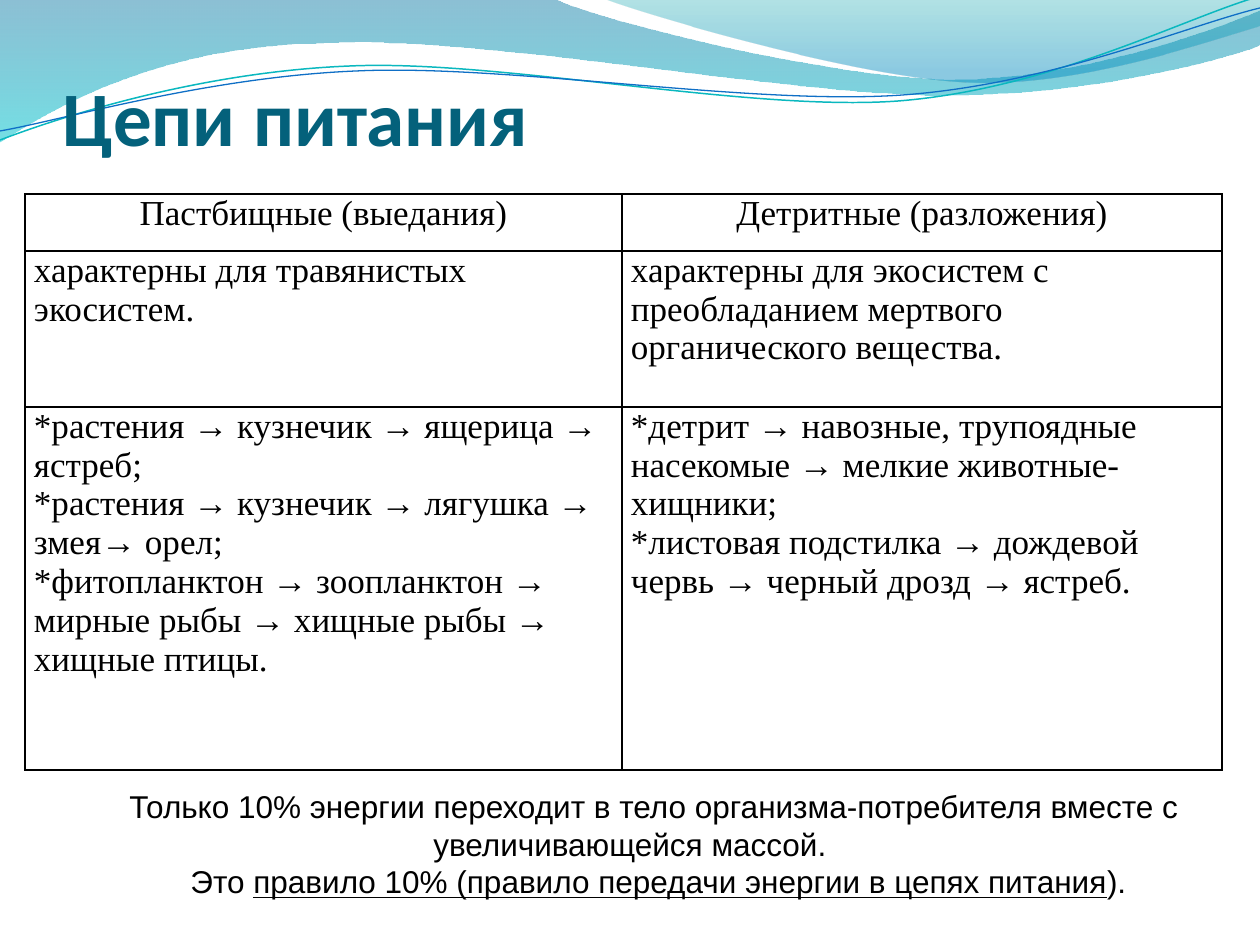
from lxml import etree
from pptx import Presentation
from pptx.dml.color import RGBColor
from pptx.enum.text import MSO_ANCHOR, PP_ALIGN
from pptx.oxml.ns import qn
from pptx.util import Pt

PX = 914400 / 126
LEFT, CENTER = PP_ALIGN.LEFT, PP_ALIGN.CENTER
BOTTOM, MIDDLE = MSO_ANCHOR.BOTTOM, MSO_ANCHOR.MIDDLE
BLACK = RGBColor(0x00, 0x00, 0x00)
TITLE_BLUE = RGBColor(0x04, 0x61, 0x7B)
DEEP_BLUE = RGBColor(0x00, 0x74, 0xA1)
AQUA = RGBColor(0x00, 0xC6, 0xCF)
TEAL = RGBColor(0x00, 0xA1, 0xA9)
SKY = RGBColor(0x00, 0x8B, 0xBF)
LINE_TEAL = RGBColor(0x0A, 0xB8, 0xBF)
LINE_BLUE = RGBColor(0x0F, 0x6F, 0xC6)
TITLE_FONT = {"name": "Calibri", "size": Pt(44), "bold": True}
TABLE_FONT = {"name": "Times New Roman", "size": Pt(20)}
NOTE_FONT = {"name": "Arial", "size": Pt(18)}


def px(*lengths):
    return [round(length * PX) for length in lengths]


def write(para, text, font, color, **extra):
    span = para.add_run()
    span.text = text
    for name, value in {**font, **extra}.items():
        setattr(span.font, name, value)
    span.font.color.rgb = color


deck = Presentation()
deck.slide_width, deck.slide_height = px(1260, 945)
page = deck.slides.add_slide(deck.slide_layouts[6])

waves = [
    {"start": (0, 0),
     "steps": [(554, -1), (600, 21, 837, 79, 955, 79), (1075, 79, 1207, 33, 1260, 11),
               (1261, 45), (1239, 55, 1096, 96, 940, 95), (784, 95, 481, 35, 324, 43),
               (163, 45, 58, 105, -1, 142), (0, 0)],
     "stops": [(0, DEEP_BLUE, 45), (1, AQUA, 55)]},
    {"start": (604, -1),
     "steps": [(641, 14, 859, 78, 969, 82), (1079, 87, 1211, 40, 1260, 26),
               (1260, 0), (604, -1)],
     "stops": [(0, TEAL, 30), (0.8, SKY, 45)]},
    {"start": (0, 140),
     "steps": [(60, 117, 199, 72, 349, 66), (498, 59, 747, 112, 898, 101),
               (1050, 89, 1182, 19, 1257, -3)],
     "line": (LINE_TEAL, 0.85)},
    {"start": (0, 131),
     "steps": [(59, 121, 207, 77, 357, 71), (508, 64, 752, 106, 903, 95),
               (1053, 84, 1186, 26, 1260, 8)],
     "line": (LINE_BLUE, 0.75)},
]
for wave in waves:
    points = [px(*step[i:i + 2]) for step in wave["steps"] for i in range(0, len(step), 2)]
    builder = page.shapes.build_freeform(*px(*wave["start"]), scale=1.0)
    builder.add_line_segments(points, close="stops" in wave)
    shape = builder.convert_to_shape()
    shape.shadow.inherit = False
    segments = iter(list(shape.element.spPr.iter(qn("a:lnTo"))))
    for step in wave["steps"]:
        segment = next(segments)
        if len(step) == 6:
            curve = etree.Element(qn("a:cubicBezTo"))
            segment.addprevious(curve)
            for node in (segment, next(segments), next(segments)):
                curve.append(node[0])
                node.getparent().remove(node)
    if "stops" in wave:
        shape.line.fill.background()
        shape.fill.gradient()
        shape.fill.gradient_angle = 270
        for stop, (position, color, opacity) in zip(shape.fill.gradient_stops, wave["stops"]):
            stop.position = position
            stop.color.rgb = color
        colors = list(shape.element.spPr.iter(qn("a:srgbClr")))
        for node, (position, color, opacity) in zip(colors, wave["stops"]):
            etree.SubElement(node, qn("a:alpha"), val=str(opacity * 1000))
    else:
        shape.fill.background()
        color, width = wave["line"]
        shape.line.color.rgb = color
        shape.line.width = Pt(width)

title = page.shapes.add_textbox(*px(63, 97, 1134, 158)).text_frame
title_format = {"word_wrap": True, "vertical_anchor": BOTTOM, "margin_left": 0,
                "margin_right": 0, "margin_top": 0, "margin_bottom": px(93)[0]}
for name, value in title_format.items():
    setattr(title, name, value)
write(title.paragraphs[0], "Цепи питания", TITLE_FONT, TITLE_BLUE)

rows = [
    (57, CENTER, [["Пастбищные (выедания)"], ["Детритные (разложения)"]]),
    (156, LEFT, [["характерны для травянистых экосистем."],
                 ["характерны для экосистем с преобладанием мертвого органического вещества."]]),
    (363, LEFT, [["*растения → кузнечик → ящерица → ястреб;",
                  "*растения → кузнечик → лягушка → змея→ орел;",
                  "*фитопланктон → зоопланктон → мирные рыбы → хищные рыбы → хищные птицы."],
                 ["*детрит → навозные, трупоядные насекомые → мелкие животные-хищники;",
                  "*листовая подстилка → дождевой червь → черный дрозд → ястреб."]]),
]
table = page.shapes.add_table(3, 2, *px(25, 194, 1197, 576)).table
table.first_row = table.horz_banding = False
for column, width in zip(table.columns, px(597, 600)):
    column.width = width
cell_format = {"margin_left": px(9)[0], "margin_right": px(9)[0],
               "margin_top": 0, "margin_bottom": 0}
for r, (height, align, texts) in enumerate(rows):
    table.rows[r].height = px(height)[0]
    for c, lines in enumerate(texts):
        cell = table.cell(r, c)
        for name, value in cell_format.items():
            setattr(cell, name, value)
        properties = cell._tc.get_or_add_tcPr()
        for side in ("a:lnL", "a:lnR", "a:lnT", "a:lnB"):
            border = etree.SubElement(properties, qn(side), w=str(Pt(1)))
            solid = etree.SubElement(border, qn("a:solidFill"))
            etree.SubElement(solid, qn("a:srgbClr"), val=str(BLACK))
        cell.fill.background()
        for i, line in enumerate(lines):
            para = cell.text_frame.add_paragraph() if i else cell.text_frame.paragraphs[0]
            para.alignment = align
            write(para, line, TABLE_FONT, BLACK)

note = page.shapes.add_textbox(*px(0, 780, 1260, 127)).text_frame
note.word_wrap = True
note.vertical_anchor = MIDDLE
note_lines = [
    [("Только 10% энергии переходит в тело организма-потребителя вместе с "
      "увеличивающейся массой.", False)],
    [(" Это ", False), ("правило 10% (правило передачи энергии в цепях питания", True),
     (").", False)],
]
for i, spans in enumerate(note_lines):
    para = note.add_paragraph() if i else note.paragraphs[0]
    para.alignment = CENTER
    para._p.get_or_add_pPr().set("indent", str(px(48)[0]))
    for text, underline in spans:
        write(para, text, NOTE_FONT, BLACK, underline=underline)

deck.save("out.pptx")
